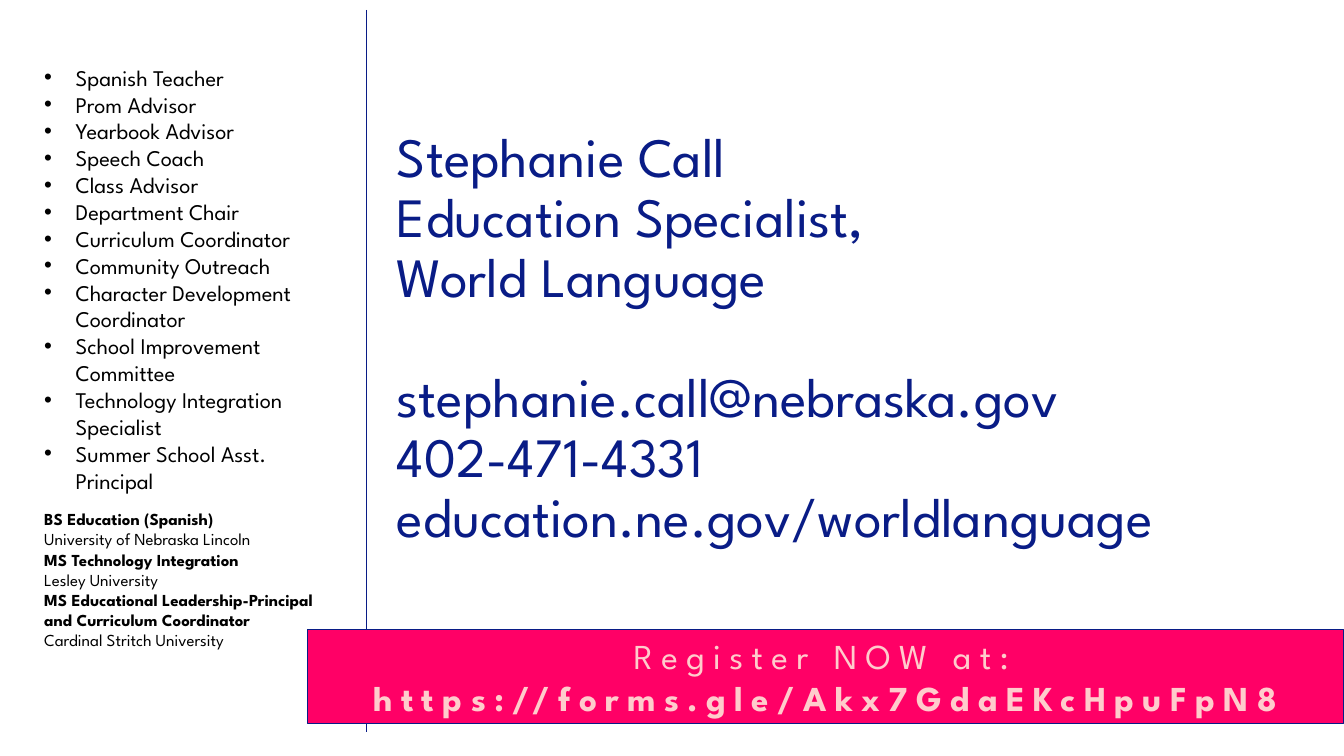
from lxml import etree
from pptx import Presentation
from pptx.dml.color import RGBColor
from pptx.enum import shapes, text
from pptx.oxml import ns
from pptx.util import Pt

COLORS = {"navy": "091C86", "black": "000000", "pink": "FF0066", "blush": "FFCCCC"}
FONT = "League Spartan"
CONTACT = [
    "Stephanie Call\vEducation Specialist, \vWorld Language",
    "stephanie.call@nebraska.gov\v402-471-4331\veducation.ne.gov/worldlanguage",
]
ROLES = [
    "Spanish Teacher", "Prom Advisor", "Yearbook Advisor", "Speech Coach",
    "Class Advisor", "Department Chair", "Curriculum Coordinator",
    "Community Outreach", "Character Development Coordinator",
    "School Improvement Committee", "Technology Integration Specialist",
    "Summer School Asst. Principal",
]
DEGREES = [
    ("BS Education (Spanish)", "University of Nebraska Lincoln"),
    ("MS Technology Integration", "Lesley University"),
    ("MS Educational Leadership-Principal and Curriculum Coordinator",
     "Cardinal Stritch University"),
]


def color(name):
    return RGBColor.from_string(COLORS[name])


def write(paragraph, content, size, ink="black", bold=False, tracking=0):
    """Append content to the paragraph; a vertical tab is a line break."""
    for i, line in enumerate(content.split("\v")):
        if i:
            paragraph.add_line_break()
        run = paragraph.add_run()
        run.text = line
        font = run.font
        font.name, font.size, font.bold = FONT, Pt(size), bold
        font.color.rgb = color(ink)
        if tracking:
            run._r.get_or_add_rPr().set("spc", str(tracking * 100))


def add_bullet(paragraph, indent):
    props = paragraph._p.get_or_add_pPr()
    props.set("marL", str(Pt(indent)))
    props.set("indent", str(Pt(-indent)))
    etree.SubElement(props, ns.qn("a:buFont")).set("typeface", "Arial")
    etree.SubElement(props, ns.qn("a:buChar")).set("char", "•")


def add_frame(slide, box):
    frame = slide.shapes.add_textbox(*map(Pt, box)).text_frame
    frame.word_wrap = True
    return frame


def paragraphs(frame, count):
    """Return count paragraphs, the first being the one the frame starts with."""
    return [frame.paragraphs[0]] + [frame.add_paragraph() for _ in range(count - 1)]


def add_contact(slide, box):
    line_height = 43
    frame = add_frame(slide, box)
    frame.vertical_anchor = text.MSO_ANCHOR.MIDDLE
    frame.margin_bottom = Pt(3.6 + line_height)
    for i, (paragraph, lines) in enumerate(zip(paragraphs(frame, len(CONTACT)), CONTACT)):
        paragraph.line_spacing = 0.9
        if i:
            paragraph.space_before = Pt(line_height)
        write(paragraph, lines, 39.6, "navy")


def add_divider(slide, box):
    left, top, width, height = box
    divider = slide.shapes.add_connector(
        shapes.MSO_CONNECTOR.STRAIGHT, Pt(left), Pt(top), Pt(left + width), Pt(top + height))
    divider.line.color.rgb = color("navy")
    divider.line.width = Pt(1)
    etree.SubElement(divider._element.spPr, ns.qn("a:effectLst"))


def add_roles(slide, box):
    frame = add_frame(slide, box)
    for paragraph, role in zip(paragraphs(frame, len(ROLES)), ROLES):
        add_bullet(paragraph, 22.5)
        write(paragraph, role, 16)


def add_degrees(slide, box):
    frame = add_frame(slide, box)
    lines = [line for degree in DEGREES for line in degree]
    for i, (paragraph, line) in enumerate(zip(paragraphs(frame, len(lines)), lines)):
        write(paragraph, line, 12, bold=i % 2 == 0)


def add_banner(slide, box):
    banner = slide.shapes.add_shape(shapes.MSO_SHAPE.RECTANGLE, *map(Pt, box))
    banner.shadow.inherit = False
    banner.fill.solid()
    banner.fill.fore_color.rgb = color("pink")
    banner.line.color.rgb = color("navy")
    banner.line.width = Pt(0.75)
    frame = banner.text_frame
    frame.word_wrap = True
    invitation = frame.paragraphs[0]
    invitation.alignment = text.PP_ALIGN.CENTER
    write(invitation, "Register NOW at: ", 25, "blush", tracking=6)
    write(invitation, "https://forms.gle/Akx7GdaEKcHpuFpN8", 25, "blush", bold=True, tracking=6)


def main():
    deck = Presentation()
    deck.slide_width, deck.slide_height = Pt(960), Pt(540)
    slide = deck.slides.add_slide(deck.slide_layouts[6])
    add_contact(slide, (276.5, 139, 683.5, 250))
    add_divider(slide, (262, 7, 0, 516))
    add_roles(slide, (24.5, 42, 231, 317.5))
    add_degrees(slide, (24.5, 360, 222.5, 124))
    add_banner(slide, (219.5, 449.5, 740.5, 67.5))
    deck.save("out.pptx")


if __name__ == "__main__":
    main()
